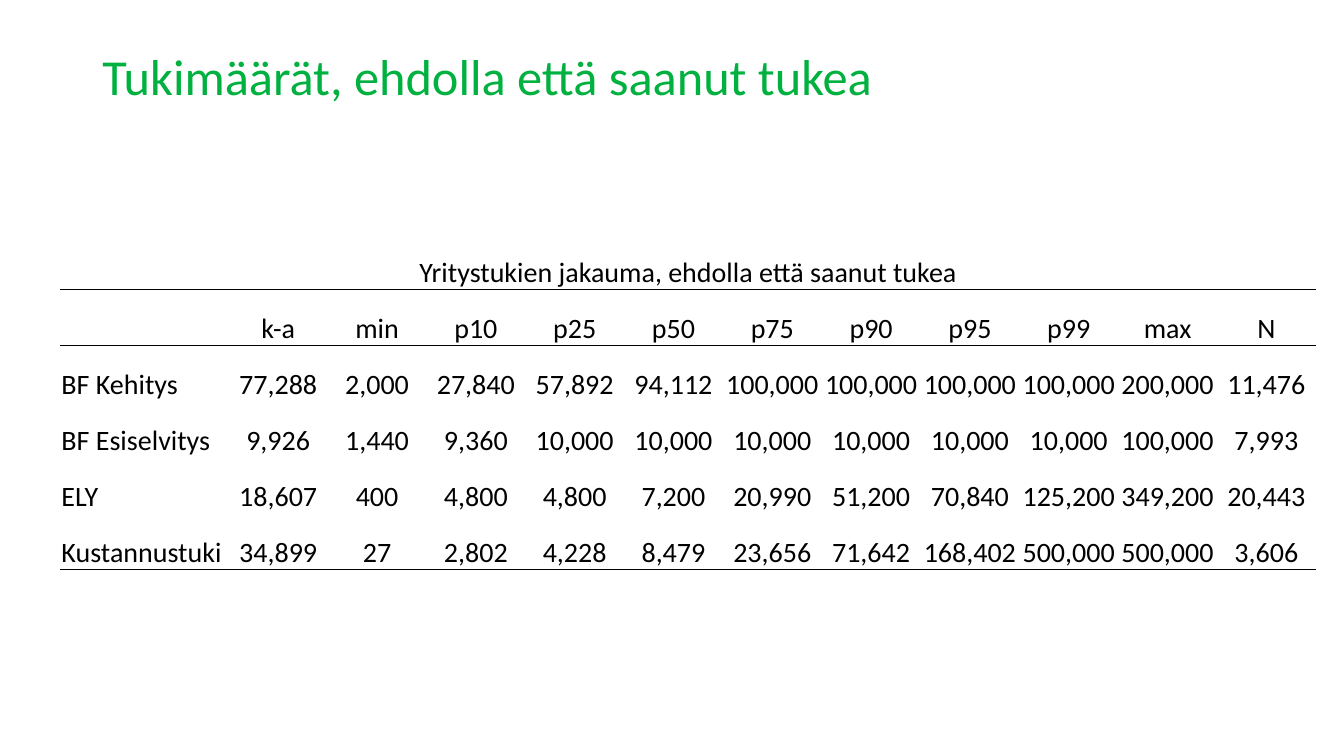
"""Build a slide with a table of business subsidy distributions."""
from lxml import etree
from pptx import Presentation
from pptx.dml.color import RGBColor
from pptx.enum.text import MSO_ANCHOR, PP_ALIGN
from pptx.oxml.ns import qn
from pptx.util import Pt

TOP, BOTTOM = MSO_ANCHOR.TOP, MSO_ANCHOR.BOTTOM
LEFT, CENTER = PP_ALIGN.LEFT, PP_ALIGN.CENTER

TITLE = "Tukimäärät, ehdolla että saanut tukea"
CAPTION = "Yritystukien jakauma, ehdolla että saanut tukea"
HEADINGS = ["", "k-a", "min", "p10", "p25", "p50", "p75", "p90", "p95", "p99", "max", "N"]
SUBSIDIES = [
    ["BF Kehitys", "77,288", "2,000", "27,840", "57,892", "94,112", "100,000",
     "100,000", "100,000", "100,000", "200,000", "11,476"],
    ["BF Esiselvitys", "9,926", "1,440", "9,360", "10,000", "10,000", "10,000",
     "10,000", "10,000", "10,000", "100,000", "7,993"],
    ["ELY", "18,607", "400", "4,800", "4,800", "7,200", "20,990",
     "51,200", "70,840", "125,200", "349,200", "20,443"],
    ["Kustannustuki", "34,899", "27", "2,802", "4,228", "8,479", "23,656",
     "71,642", "168,402", "500,000", "500,000", "3,606"],
]
COLORS = {"title": "00B140", "text": "000000", "rule": "000000"}
FONT = "Calibri"
TITLE_FRAME = {"word_wrap": True, "vertical_anchor": TOP}
CELL_FORMAT = {
    "vertical_anchor": BOTTOM, "margin_left": Pt(0.7), "margin_right": Pt(0.7),
    "margin_top": Pt(0.7), "margin_bottom": Pt(0),
}
LABEL_WIDTH, VALUE_WIDTH, ROW_HEIGHT = 120.3, 70.6, 40
RULE_WIDTH = 0.5


def set_attributes(target, values):
    for name, value in values.items():
        setattr(target, name, value)


def write(para, text, size, color, align):
    para.alignment = align
    span = para.add_run()
    span.text = text
    set_attributes(span.font, {"name": FONT, "size": Pt(size)})
    span.font.color.rgb = RGBColor.from_string(COLORS[color])


def set_borders(cell, ruled_sides):
    properties = cell._tc.get_or_add_tcPr()
    for side in "LRTB":
        line = etree.SubElement(properties, qn(f"a:ln{side}"))
        if side in ruled_sides:
            line.set("w", str(int(Pt(RULE_WIDTH))))
            fill = etree.SubElement(line, qn("a:solidFill"))
            etree.SubElement(fill, qn("a:srgbClr"), val=COLORS["rule"])
        else:
            line.set("w", "0")
            etree.SubElement(line, qn("a:noFill"))


def add_title(page):
    box = page.shapes.add_textbox(Pt(66), Pt(33.8), Pt(828), Pt(84.2))
    set_attributes(box.text_frame, TITLE_FRAME)
    para = box.text_frame.paragraphs[0]
    para.line_spacing = 0.9
    write(para, TITLE, 36, "title", LEFT)


def add_subsidy_table(page):
    rows = [[CAPTION] + [""] * (len(HEADINGS) - 1), HEADINGS, *SUBSIDIES]
    widths = [LABEL_WIDTH] + [VALUE_WIDTH] * (len(HEADINGS) - 1)
    frame = page.shapes.add_table(len(rows), len(widths), Pt(43.2), Pt(167),
                                  Pt(sum(widths)), Pt(ROW_HEIGHT * len(rows)))
    table = frame.table
    set_attributes(table, {"first_row": False, "horz_banding": False})
    for column, width in zip(table.columns, widths):
        column.width = Pt(width)
    ruled_sides = {0: "B", 1: "TB", 2: "T", len(rows) - 1: "B"}
    for row_index, values in enumerate(rows):
        table.rows[row_index].height = Pt(ROW_HEIGHT)
        for column_index, value in enumerate(values):
            cell = table.cell(row_index, column_index)
            set_attributes(cell, CELL_FORMAT)
            set_borders(cell, ruled_sides.get(row_index, ""))
            cell.fill.background()
            if value:
                align = LEFT if row_index > 1 and column_index == 0 else CENTER
                write(cell.text_frame.paragraphs[0], value, 20, "text", align)
    table.cell(0, 0).merge(table.cell(0, len(widths) - 1))


def main():
    deck = Presentation()
    set_attributes(deck, {"slide_width": Pt(960), "slide_height": Pt(540)})
    page = deck.slides.add_slide(deck.slide_layouts[6])
    add_title(page)
    add_subsidy_table(page)
    deck.save("out.pptx")


if __name__ == "__main__":
    main()
